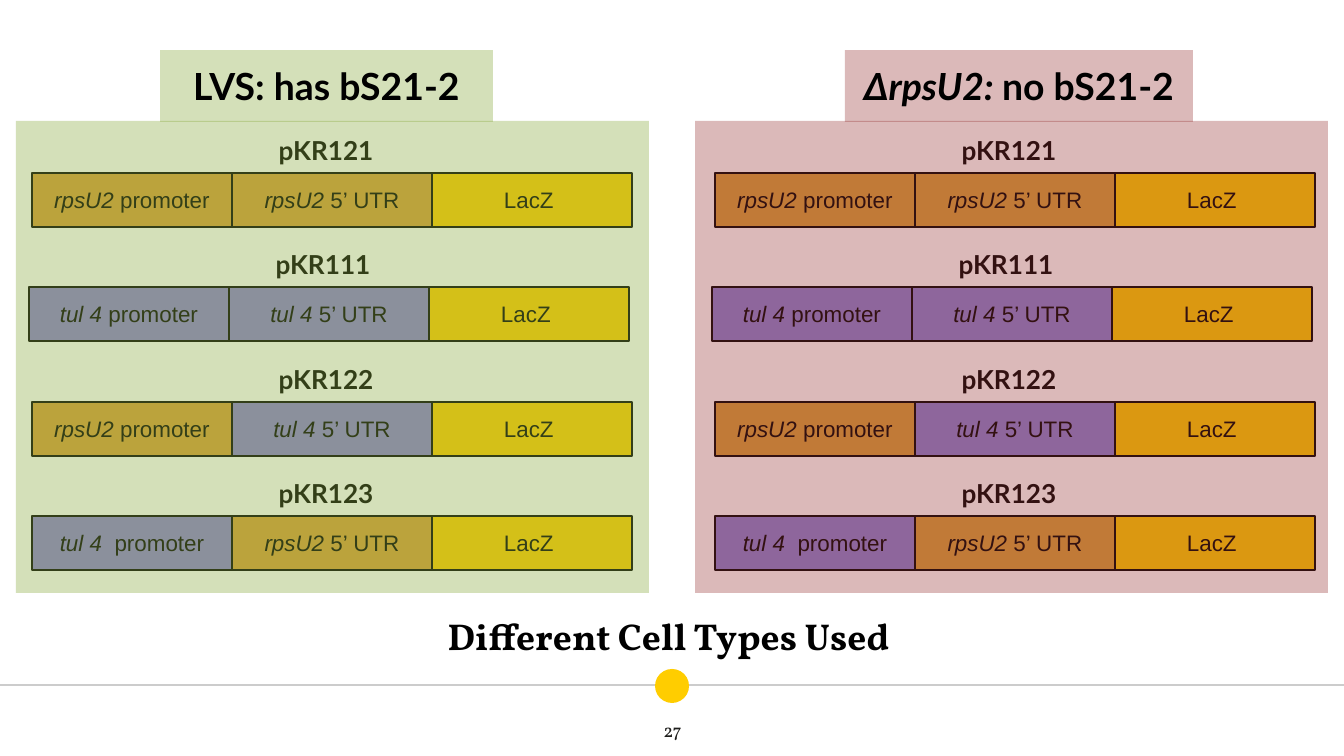
from lxml import etree
from pptx import Presentation
from pptx.dml.color import RGBColor
from pptx.enum.shapes import MSO_CONNECTOR, MSO_SHAPE
from pptx.enum.text import MSO_ANCHOR, MSO_AUTO_SIZE, PP_ALIGN
from pptx.oxml.ns import qn
from pptx.util import Pt

RECTANGLE, OVAL = MSO_SHAPE.RECTANGLE, MSO_SHAPE.OVAL
STRAIGHT = MSO_CONNECTOR.STRAIGHT
TOP, MIDDLE, BOTTOM = MSO_ANCHOR.TOP, MSO_ANCHOR.MIDDLE, MSO_ANCHOR.BOTTOM
CENTER = PP_ALIGN.CENTER
NO_AUTOFIT = MSO_AUTO_SIZE.NONE
PX = 9144000 / 1344  # EMU in one pixel

THEME = {
    "black": RGBColor(0x00, 0x00, 0x00),
    "number": RGBColor(0x1D, 0x1D, 0x1B),
    "rule": RGBColor(0xCC, 0xCC, 0xCC),
    "yellow": RGBColor(0xFF, 0xCD, 0x00),
    "orange": RGBColor(0xD8, 0x9F, 0x39),
    "violet": RGBColor(0x8B, 0x81, 0xD2),
    "green": RGBColor(0x8B, 0xAB, 0x42),
    "red": RGBColor(0x96, 0x33, 0x34),
    "heading_font": "Lato", "gene_font": "Arial", "caption_font": "Vollkorn",
    "heading_size": 20, "label_size": 14, "gene_size": 12, "number_size": 10,
    "line_width": 0.75,
}


def add_box(kind, box, color, alpha=None, outlined=False):
    """Add a filled preset shape; box is left, top, width, height in px."""
    shape = slide.shapes.add_shape(kind, *[round(value * PX) for value in box])
    shape.shadow.inherit = False
    shape.fill.solid()
    shape.fill.fore_color.rgb = THEME[color]
    if alpha:
        color_element = shape._element.spPr.find(qn("a:solidFill"))[0]
        etree.SubElement(color_element, qn("a:alpha")).set("val", str(alpha * 1000))
    if outlined:
        shape.line.color.rgb = THEME["black"]
        shape.line.width = Pt(THEME["line_width"])
    else:
        shape.line.fill.background()
    return shape


def write_text(shape, runs, role, size, anchor, bold=False, color="black"):
    """Fill a shape with one centred paragraph of (text, italic) runs."""
    frame = shape.text_frame
    frame.word_wrap = True
    frame.auto_size = NO_AUTOFIT
    frame.vertical_anchor = anchor
    frame.margin_left = frame.margin_right = round(13 * PX)
    frame.margin_top = frame.margin_bottom = round(13 * PX)
    paragraph = frame.paragraphs[0]
    paragraph.alignment = CENTER
    for text, italic in runs:
        run = paragraph.add_run()
        run.text = text
        run.font.name = THEME[role]
        run.font.size = Pt(THEME[size])
        run.font.bold = bold
        run.font.italic = italic
        run.font.color.rgb = THEME[color]
    return paragraph


presentation = Presentation()
presentation.slide_width = round(1344 * PX)
presentation.slide_height = round(756 * PX)
slide = presentation.slides.add_slide(presentation.slide_layouts[5])

# Footer rule with its dot
rule = slide.shapes.add_connector(
    STRAIGHT, *[round(value * PX) for value in (-1, 685, 1345, 685)])
rule.line.color.rgb = THEME["rule"]
rule.line.width = Pt(THEME["line_width"])
etree.SubElement(rule._element.spPr, qn("a:effectLst"))
add_box(OVAL, (655, 669, 34, 34), "yellow")

# Caption
caption = slide.shapes.title
caption.left, caption.top, caption.width, caption.height = [
    round(value * PX) for value in (293, 594, 759, 77)]
paragraph = write_text(caption, [("Different Cell Types Used ", False)],
                       "caption_font", "heading_size", BOTTOM, bold=True)
paragraph.space_before = Pt(3.6)

# Slide number
number = slide.shapes.add_textbox(*[round(value * PX) for value in (632, 703, 81, 54)])
write_text(number, [("27", False)], "caption_font", "number_size", MIDDLE, color="number")

# Constructs: name, left shift, promoter gene, 5’ UTR gene
CONSTRUCTS = [
    ("pKR121", 0, "rpsU2", "rpsU2"),
    ("pKR111", -3, "tul 4 ", "tul 4 "),
    ("pKR122", 0, "rpsU2", "tul 4 "),
    ("pKR123", 0, "tul 4  ", "rpsU2"),
]
GENE_WIDTH, GENE_HEIGHT = 200, 54
FIRST_ROW, ROW_STEP = 173, 114.4

for column_left in (32, 715):
    for row, (name, shift, promoter, leader) in enumerate(CONSTRUCTS):
        left = column_left + shift
        top = FIRST_ROW + round(row * ROW_STEP)
        segments = []
        for gene, part in ((promoter, "promoter"), (leader, "5’ UTR")):
            is_rpsu = gene == "rpsU2"
            part_text = " " + part if is_rpsu else part
            segments.append(("orange" if is_rpsu else "violet",
                             [(gene, True), (part_text, False)]))
        segments.append(("yellow", [("LacZ ", False)]))
        for index, (color, runs) in enumerate(segments):
            segment = add_box(RECTANGLE, (left + index * GENE_WIDTH, top,
                                          GENE_WIDTH, GENE_HEIGHT), color, outlined=True)
            write_text(segment, runs, "gene_font", "gene_size", MIDDLE)
        label = slide.shapes.add_textbox(
            *[round(value * PX) for value in (left + 210, top - 52, 168, 59)])
        write_text(label, [(name, False)], "heading_font", "label_size", TOP, bold=True)

# Translucent cell-type tabs and panels, laid over the constructs
CELL_TYPES = [
    ("green", 37, 160, 333, 16, [("LVS: has bS21-2", False)]),
    ("red", 34, 845, 348, 695, [("ΔrpsU2: ", True), ("no bS21-2", False)]),
]
for color, alpha, tab_left, tab_width, panel_left, heading in CELL_TYPES:
    tab = add_box(RECTANGLE, (tab_left, 50, tab_width, 72), color, alpha)
    write_text(tab, heading, "heading_font", "heading_size", TOP, bold=True)
    add_box(RECTANGLE, (panel_left, 121, 633, 472), color, alpha)

presentation.save("out.pptx")
